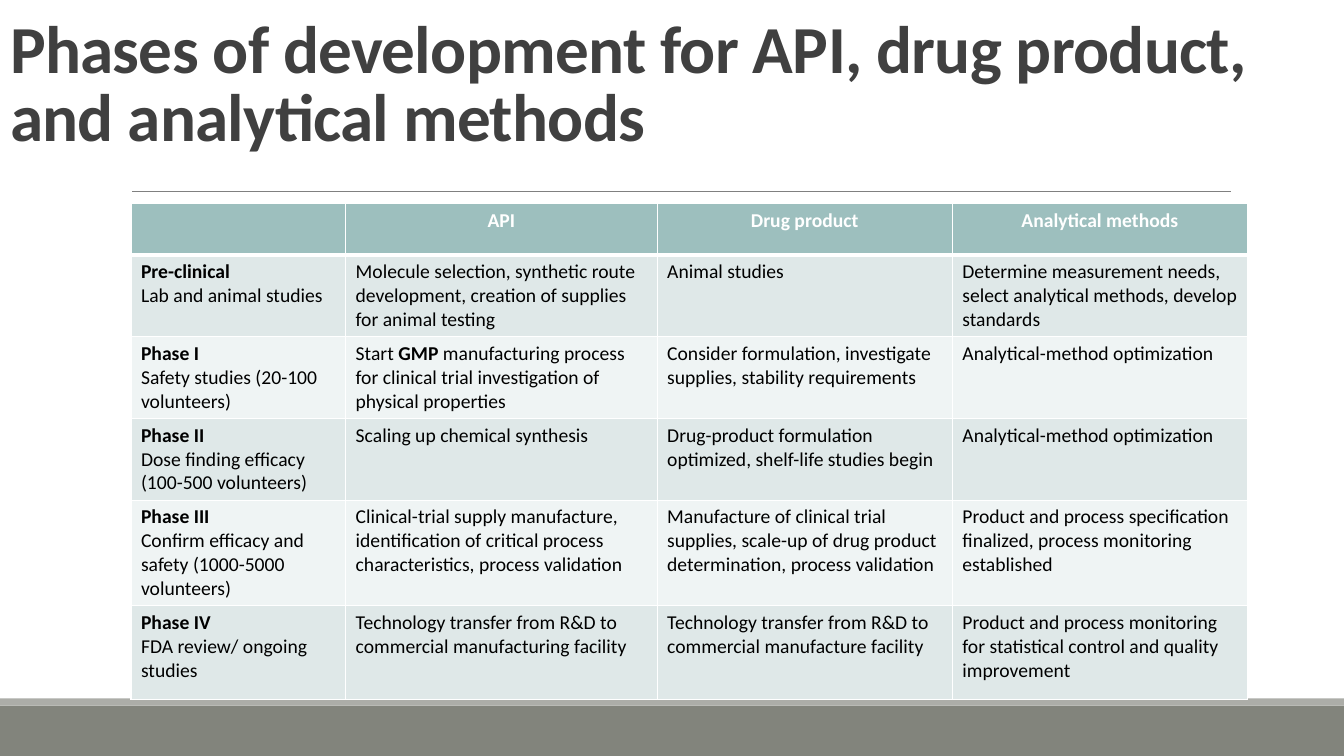
from dataclasses import dataclass

from lxml.etree import SubElement
from pptx import Presentation
from pptx.dml.color import RGBColor
from pptx.enum.shapes import MSO_CONNECTOR, MSO_SHAPE
from pptx.enum.text import MSO_ANCHOR, MSO_AUTO_SIZE, PP_ALIGN
from pptx.oxml.ns import qn
from pptx.slide import Slide
from pptx.table import _Cell
from pptx.util import Cm, Pt

FONT = "Calibri"
WIDE, HIGH = 33.87, 19.05
COLS = (5.41, 7.85, 7.44, 7.44)
ROWS = (1.3, 1.93, 1.93, 1.93, 2.49, 2.36)
BANDS = ("DFE8E8", "EFF4F4")

# Text between asterisks is bold; a newline starts a new paragraph
GRID = (
    ("", "*API*", "*Drug product*", "*Analytical methods*"),
    ("*Pre-clinical*\nLab and animal studies",
     "Molecule selection, synthetic route development, creation of supplies for animal testing",
     "Animal studies",
     "Determine measurement needs, select analytical methods, develop standards"),
    ("*Phase I*\nSafety studies (20-100 volunteers)",
     "Start *GMP* manufacturing process for clinical trial investigation of physical properties",
     "Consider formulation, investigate supplies, stability requirements",
     "Analytical-method optimization"),
    ("*Phase II*\nDose finding efficacy\n(100-500 volunteers)",
     "Scaling up chemical synthesis",
     "Drug-product formulation optimized, shelf-life studies begin",
     "Analytical-method optimization"),
    ("*Phase III*\nConfirm efficacy and safety (1000-5000 volunteers)",
     "Clinical-trial supply manufacture, identification of critical process characteristics, "
     "process validation",
     "Manufacture of clinical trial supplies, scale-up of drug product determination, "
     "process validation",
     "Product and process specification finalized, process monitoring established"),
    ("*Phase IV*\nFDA review/ ongoing studies",
     "Technology transfer from R&D to commercial manufacturing facility",
     "Technology transfer from R&D to commercial manufacture facility",
     "Product and process monitoring for statistical control and quality improvement"),
)


@dataclass(frozen=True)
class Bar:
    top: float
    high: float
    fill: str


@dataclass(frozen=True)
class Look:
    fill: str
    ink: str
    align: PP_ALIGN


BARS = (Bar(17.78, 1.27, "82847C"), Bar(17.6, 0.18, "ACADA8"))
HEAD = Look("9DBFBE", "FFFFFF", PP_ALIGN.CENTER)


def color(code: str) -> RGBColor:
    return RGBColor.from_string(code)


def draw_bar(slide: Slide, bar: Bar) -> None:
    shape = slide.shapes.add_shape(
        MSO_SHAPE.RECTANGLE, Cm(0), Cm(bar.top), Cm(WIDE), Cm(bar.high))
    shape.shadow.inherit = False
    shape.fill.solid()
    shape.fill.fore_color.rgb = color(bar.fill)
    shape.line.fill.background()


def draw_rule(slide: Slide) -> None:
    rule = slide.shapes.add_connector(
        MSO_CONNECTOR.STRAIGHT, Cm(3.33), Cm(4.83), Cm(31.01), Cm(4.83))
    rule.line.color.rgb = color("808080")
    rule.line.width = Pt(0.5)
    SubElement(rule._element.spPr, qn("a:effectLst"))


def draw_title(slide: Slide, text: str) -> None:
    title = slide.shapes.title
    title.left, title.top, title.width, title.height = Cm(0), Cm(0), Cm(WIDE), Cm(4.04)
    frame = title.text_frame
    frame.auto_size = MSO_AUTO_SIZE.NONE
    frame.word_wrap = True
    frame.vertical_anchor = MSO_ANCHOR.BOTTOM
    para = frame.paragraphs[0]
    para.alignment = PP_ALIGN.LEFT
    para.line_spacing = 0.85
    font = para.font
    font.name, font.size, font.bold = FONT, Pt(48), True
    font.color.rgb = color("404040")
    run = para.add_run()
    run.text = text
    run._r.get_or_add_rPr().set("spc", "-50")


def set_edges(cell: _Cell, base: float, top: float) -> None:
    props = cell._tc.get_or_add_tcPr()
    for side, width in (("L", 1), ("R", 1), ("T", top), ("B", base)):
        edge = SubElement(props, qn(f"a:ln{side}"), w=str(Pt(width)))
        fill = SubElement(edge, qn("a:solidFill"))
        SubElement(fill, qn("a:srgbClr"), val="FFFFFF")


def fill_cell(cell: _Cell, text: str, look: Look) -> None:
    cell.fill.solid()
    cell.fill.fore_color.rgb = color(look.fill)
    frame = cell.text_frame
    for i, line in enumerate(text.split("\n")):
        para = frame.add_paragraph() if i else frame.paragraphs[0]
        para.alignment = look.align
        para.font.name, para.font.size = FONT, Pt(14)
        para.font.color.rgb = color(look.ink)
        for j, part in enumerate(line.split("*")):
            if part:
                run = para.add_run()
                run.text = part
                run.font.bold = j % 2 == 1


def draw_table(slide: Slide) -> None:
    table = slide.shapes.add_table(
        len(ROWS), len(COLS), Cm(3.3), Cm(5.13), Cm(sum(COLS)), Cm(sum(ROWS))).table
    table.first_row = table.horz_banding = False
    for col, width in zip(table.columns, COLS):
        col.width = Cm(width)
    for r, (row, high) in enumerate(zip(table.rows, ROWS)):
        row.height = Cm(high)
        look = Look(BANDS[(r - 1) % 2], "000000", PP_ALIGN.LEFT) if r else HEAD
        for cell, text in zip(row.cells, GRID[r]):
            set_edges(cell, base=1 if r else 3, top=3 if r == 1 else 1)
            fill_cell(cell, text, look)


def main() -> None:
    deck = Presentation()
    deck.slide_width, deck.slide_height = Cm(WIDE), Cm(HIGH)
    slide = deck.slides.add_slide(deck.slide_layouts[5])

    # Footer bars and the rule under the title
    for bar in BARS:
        draw_bar(slide, bar)
    draw_rule(slide)

    # Title and table of phases
    draw_title(slide, "Phases of development for API, drug product, and analytical methods")
    draw_table(slide)
    deck.save("out.pptx")


if __name__ == "__main__":
    main()
